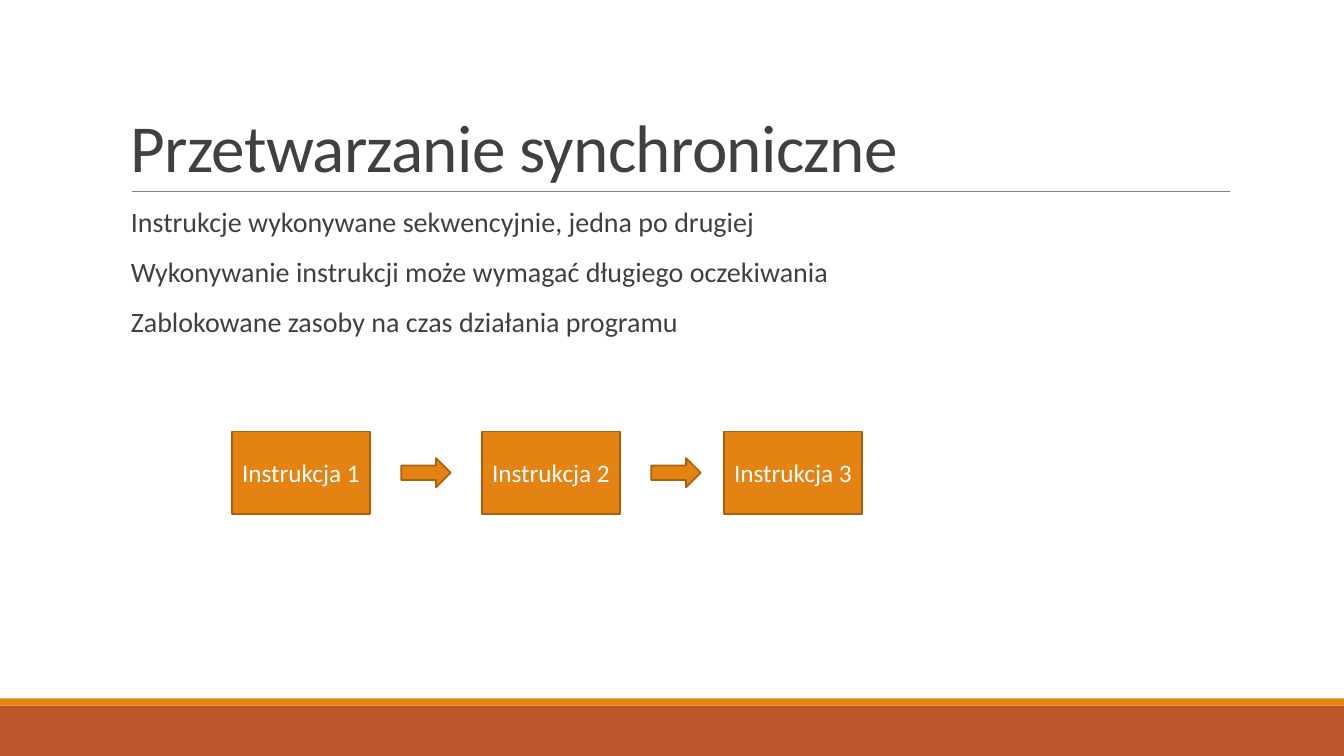
from pptx import Presentation
from pptx.dml.color import RGBColor
from pptx.enum.shapes import MSO_CONNECTOR, MSO_SHAPE
from pptx.enum.text import MSO_ANCHOR, PP_ALIGN
from pptx.oxml.ns import qn
from pptx.util import Inches, Pt
from lxml.etree import SubElement

COLORS = {
    "orange": "E48312",
    "outline": "A9610D",
    "rust": "BD582C",
    "rule": "808080",
    "text": "404040",
    "white": "FFFFFF",
}
FONT = "Calibri"
WIDTH, HEIGHT = 13.33, 7.5


def color(name):
    """Return the named palette colour."""
    return RGBColor.from_string(COLORS[name])


def style(paragraph, size, name):
    """Set the font of a whole paragraph."""
    paragraph.font.name = FONT
    paragraph.font.size = Pt(size)
    paragraph.font.color.rgb = color(name)


def add_block(page, kind, box, fill, outline=None):
    """Add a flat filled shape in the given box."""
    block = page.shapes.add_shape(kind, *map(Inches, box))
    block.shadow.inherit = False
    block.fill.solid()
    block.fill.fore_color.rgb = color(fill)
    if outline:
        block.line.color.rgb = color(outline)
        block.line.width = Pt(1.25)
    else:
        block.line.fill.background()
    return block


def add_footer(page, box):
    """Fill the box with a rust band under a thin orange stripe."""
    left, top, width, height = box
    stripe = 0.07
    add_block(page, MSO_SHAPE.RECTANGLE, (left, top + stripe, width, height - stripe), "rust")
    add_block(page, MSO_SHAPE.RECTANGLE, (left, top, width, stripe), "orange")


def add_title(page, box, text):
    """Set the title at the bottom of the box, underlined by a rule."""
    left, top, width, height = box
    bottom = Inches(top + height)
    rule = page.shapes.add_connector(
        MSO_CONNECTOR.STRAIGHT, Inches(left + 0.11), bottom, Inches(left + width), bottom)
    rule.line.color.rgb = color("rule")
    rule.line.width = Pt(0.5)
    SubElement(rule._element.spPr, qn("a:effectLst"))

    frame = page.shapes.add_textbox(*map(Inches, box)).text_frame
    frame.word_wrap = True
    frame.vertical_anchor = MSO_ANCHOR.BOTTOM
    para = frame.paragraphs[0]
    para.line_spacing = 0.85
    style(para, 48, "text")
    span = para.add_run()
    span.text = text
    span._r.get_or_add_rPr().set("spc", "-50")


def add_body(page, box, lines):
    """Set one paragraph per line in the box."""
    frame = page.shapes.add_textbox(*map(Inches, box)).text_frame
    frame.word_wrap = True
    frame.margin_right = 0
    frame.text = "\n".join(lines)
    for para in frame.paragraphs:
        para.line_spacing = 0.9
        para.space_before = Pt(12)
        para.space_after = Pt(2)
        style(para, 20, "text")


def add_flow(page, box, steps):
    """Place steps at their offsets in the box, with an arrow after all but the last."""
    left, top, _, height = box
    step_width, arrow_width, arrow_height = 1.37, 0.49, 0.29
    arrow_top = top + (height - arrow_height) / 2
    for number, (label, offset) in enumerate(steps, 1):
        step_left = left + offset
        step = add_block(page, MSO_SHAPE.RECTANGLE, (step_left, top, step_width, height),
                         "orange", "outline")
        frame = step.text_frame
        frame.word_wrap = True
        frame.vertical_anchor = MSO_ANCHOR.MIDDLE
        frame.text = label
        para = frame.paragraphs[0]
        para.alignment = PP_ALIGN.CENTER
        style(para, 18, "white")
        if number < len(steps):
            arrow_left = step_left + step_width + 0.31
            add_block(page, MSO_SHAPE.RIGHT_ARROW,
                      (arrow_left, arrow_top, arrow_width, arrow_height), "orange", "outline")


def main():
    """Build the slide and save the deck."""
    deck = Presentation()
    deck.slide_width, deck.slide_height = Inches(WIDTH), Inches(HEIGHT)
    page = deck.slides.add_slide(deck.slide_layouts[6])
    add_footer(page, (0, HEIGHT - 0.57, WIDTH, 0.57))
    add_title(page, (1.2, 0.31, 11, 1.59), "Przetwarzanie synchroniczne")
    add_body(page, (1.2, 2.02, 11, 4.4), [
        "Instrukcje wykonywane sekwencyjnie, jedna po drugiej",
        "Wykonywanie instrukcji może wymagać długiego oczekiwania",
        "Zablokowane zasoby na czas działania programu",
    ])
    add_flow(page, (2.3, 4.28, 6.25, 0.82), [
        ("Instrukcja 1", 0),
        ("Instrukcja 2", 2.48),
        ("Instrukcja 3", 4.88),
    ])
    deck.save("out.pptx")


if __name__ == "__main__":
    main()
